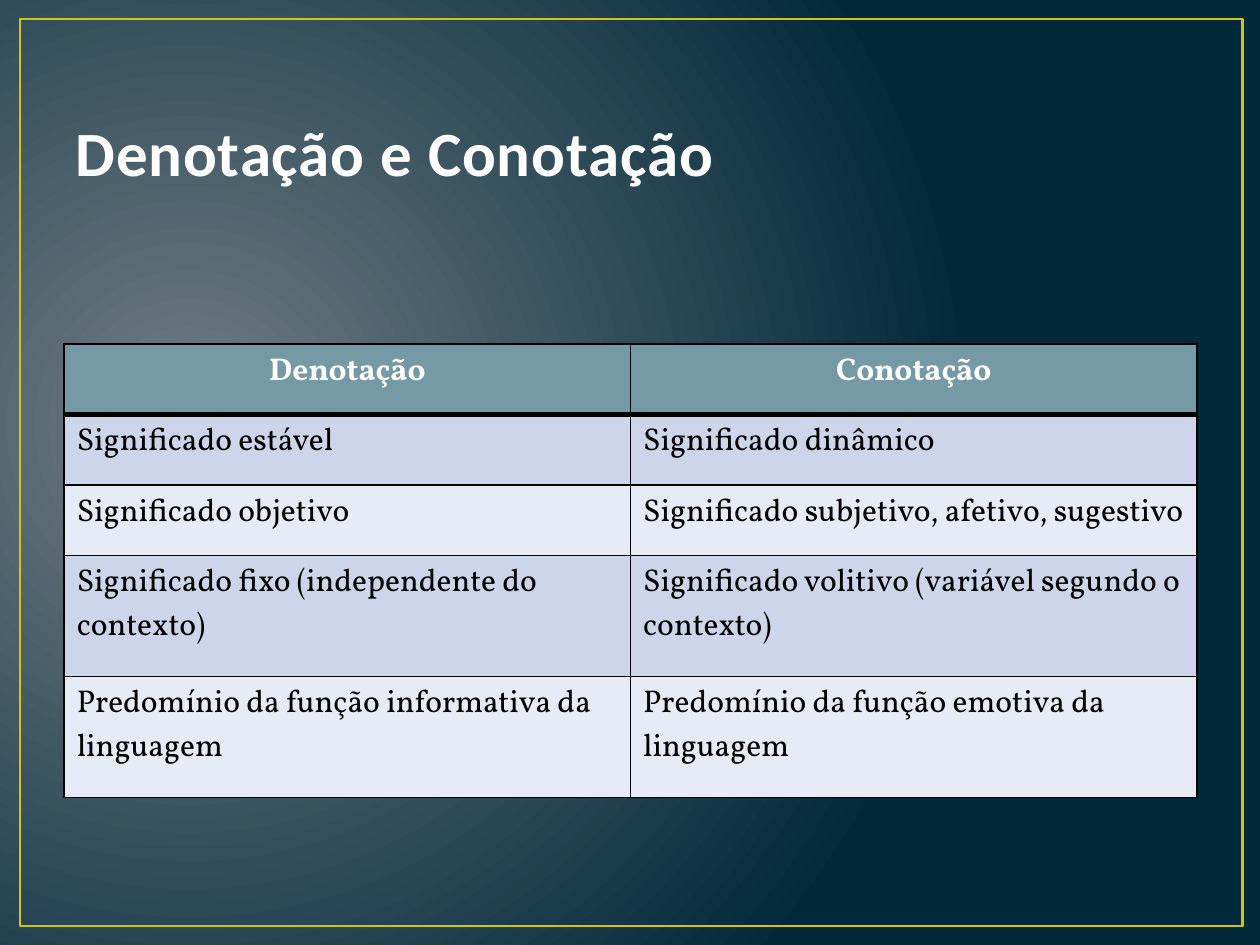
from dataclasses import dataclass

from pptx import Presentation
from pptx.dml.color import RGBColor
from pptx.enum.shapes import MSO_SHAPE as SHAPE
from pptx.enum.text import MSO_ANCHOR as ANCHOR, PP_ALIGN as ALIGN
from pptx.oxml import parse_xml
from pptx.oxml.ns import nsdecls
from pptx.util import Inches, Pt


@dataclass(frozen=True)
class Theme:
    """Colours, fonts and type sizes."""
    glow: str = "717C84"
    night: str = "01293A"
    frame: str = "CFC60D"
    title: str = "FEFEFE"
    outline: str = "384F55"
    header: str = "759AA5"
    bands: tuple = ("CCD5EA", "E7EBF5")
    light: str = "FFFFFF"
    dark: str = "000000"
    title_font: str = "Calibri"
    table_font: str = "Vollkorn"
    title_size: float = 36
    table_size: float = 18


def solid_line(tag, color, width):
    """Return a solid line element with the given tag."""
    return parse_xml(
        f'<a:{tag} {nsdecls("a")} w="{Pt(width)}"><a:solidFill>'
        f'<a:srgbClr val="{color}"/></a:solidFill></a:{tag}>')


class SlideBuilder:
    """Draws styled elements on the current slide."""

    def __init__(self, s, theme):
        self.s, self.theme = s, theme

    def background(self):
        """Fill the slide with a round glow."""
        t = self.theme
        fill = self.s.background.fill
        fill.solid()
        bg = self.s._element.cSld.bg.bgPr
        stops = "".join(
            f'<a:gs pos="{pos}"><a:srgbClr val="{color}"/></a:gs>'
            for pos, color in ((0, t.glow), (100000, t.night)))
        bg.replace(bg[0], parse_xml(
            f'<a:gradFill {nsdecls("a")} rotWithShape="1"><a:gsLst>{stops}</a:gsLst>'
            '<a:path path="circle"><a:fillToRect l="15000" t="50000" r="85000" b="60000"/>'
            '</a:path></a:gradFill>'))

    def frame(self, x, y, w, h):
        """Draw the thin border behind everything else."""
        sp = self.s.shapes.add_shape(
            SHAPE.RECTANGLE, Inches(x), Inches(y), Inches(w), Inches(h))
        sp.shadow.inherit = False
        sp.fill.background()
        sp.line.color.rgb = RGBColor.from_string(self.theme.frame)
        sp.line.width = Pt(1.5)
        self.s.shapes._spTree.insert(2, sp._element)

    def add_text(self, tf, text, align, color, **font):
        """Add one formatted run to the first paragraph and return it."""
        p = tf.paragraphs[0]
        p.alignment = align
        r = p.add_run()
        r.text = text
        for name, value in font.items():
            setattr(r.font, name, value)
        r.font.color.rgb = RGBColor.from_string(color)
        return r

    def title(self, text, x, y, w, h):
        """Place and format the title placeholder."""
        t, sp = self.theme, self.s.shapes.title
        box = dict(left=x, top=y, width=w, height=h)
        for name, value in box.items():
            setattr(sp, name, Inches(value))
        sp.text_frame.vertical_anchor = ANCHOR.BOTTOM
        r = self.add_text(sp.text_frame, text, ALIGN.LEFT, t.title,
                          name=t.title_font, size=Pt(t.title_size), bold=True)
        rpr = r.font._element
        rpr.set("spc", "50")
        rpr.insert(0, solid_line("ln", t.outline, 1.05))

    def cell(self, cell, text, row):
        """Fill, border and label one table cell."""
        t, head = self.theme, row == 0
        edges = dict(lnL=1, lnR=1, lnT=3 if row == 1 else 1, lnB=3 if head else 1)
        tcpr = cell._tc.get_or_add_tcPr()
        for tag, width in edges.items():
            tcpr.append(solid_line(tag, t.dark, width))
        cell.fill.solid()
        color = t.header if head else t.bands[(row - 1) % 2]
        cell.fill.fore_color.rgb = RGBColor.from_string(color)
        self.add_text(cell.text_frame, text, ALIGN.CENTER if head else ALIGN.LEFT,
                      t.light if head else t.dark, name=t.table_font,
                      size=Pt(t.table_size), bold=head)

    def table(self, rows, heights, x, y, w):
        """Add a table with equal columns and the given row heights."""
        table = self.s.shapes.add_table(
            len(rows), len(rows[0]), Inches(x), Inches(y),
            Inches(w), Inches(sum(heights))).table
        table.first_row = table.horz_banding = False
        for i, (texts, height) in enumerate(zip(rows, heights)):
            table.rows[i].height = Inches(height)
            for j, text in enumerate(texts):
                self.cell(table.cell(i, j), text, i)


ROWS = [
    ("Denotação", "Conotação"),
    ("Significado estável", "Significado dinâmico"),
    ("Significado objetivo", "Significado subjetivo, afetivo, sugestivo"),
    ("Significado fixo (independente do contexto)",
     "Significado volitivo (variável segundo o contexto)"),
    ("Predomínio da função informativa da linguagem",
     "Predomínio da função emotiva da linguagem"),
]


def main():
    """Build the slide and save it."""
    prs = Presentation()
    prs.slide_width, prs.slide_height = Inches(10), Inches(7.5)
    slide = SlideBuilder(prs.slides.add_slide(prs.slide_layouts[5]), Theme())
    slide.background()
    slide.frame(0.16, 0.15, 9.7, 7.2)
    slide.title("Denotação e Conotação", 0.5, 0.3, 9, 1.25)
    slide.table(ROWS, [0.56] * 3 + [0.96] * 2, 0.51, 2.73, 8.99)
    prs.save("out.pptx")


if __name__ == "__main__":
    main()
